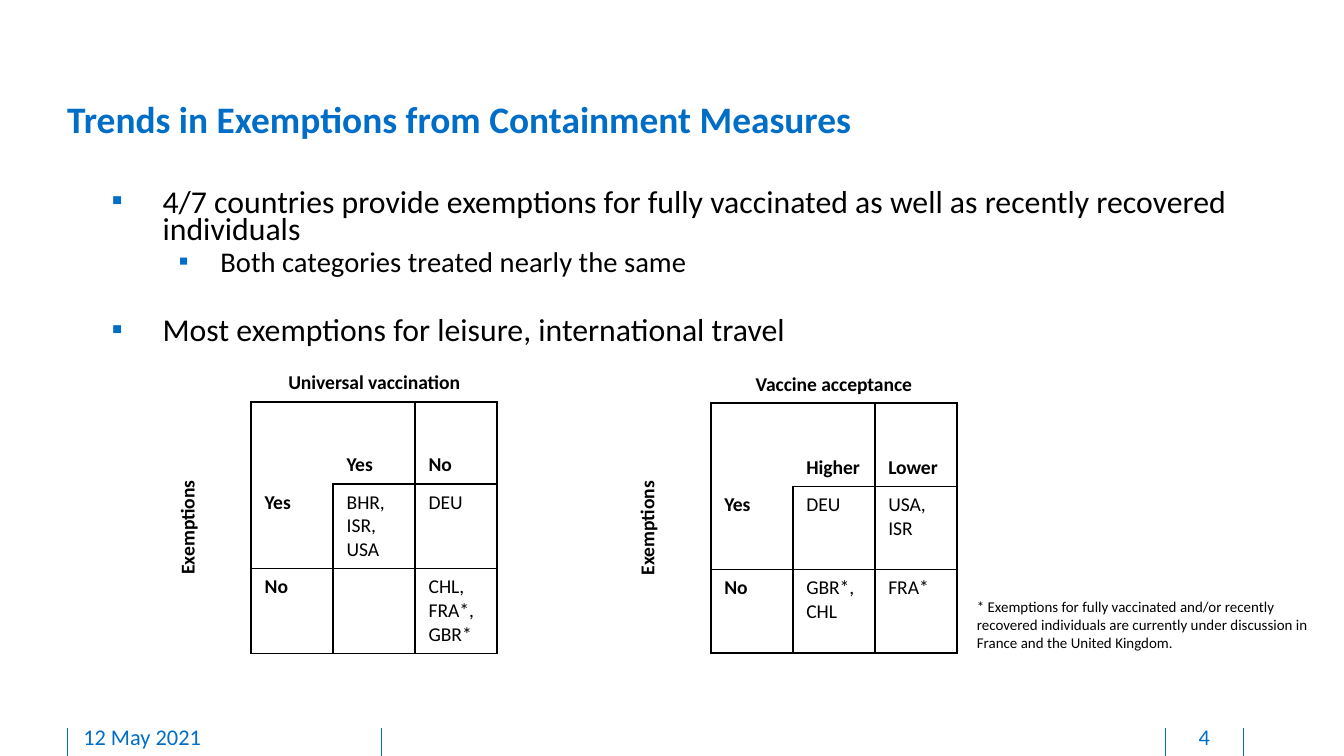
from dataclasses import dataclass

from lxml.etree import SubElement
from pptx import Presentation
from pptx.dml.color import RGBColor
from pptx.enum.shapes import MSO_CONNECTOR
from pptx.enum.text import MSO_ANCHOR, MSO_AUTO_SIZE, PP_ALIGN
from pptx.oxml.ns import qn
from pptx.util import Inches, Pt

BLUE, BLACK = "006EC7", "000000"
FONT = "Calibri"
SIDES = "LRTB"

# Sides of each table cell that carry a line
BORDERS = [
    ["", "B", "B", "B"],
    ["R", "LT", "TRB", "LTRB"],
    ["R", "LRB", "LTRB", "LTRB"],
    ["R", "LTRB", "LTRB", "LTRB"],
]


@dataclass
class Matrix:
    left: float
    row_height: float
    heading: str
    columns: list[str]
    rows: list[list[str]]


@dataclass
class Bullet:
    text: str
    level: int = 0
    size: float = 17
    margin: float = 0.38
    indent: float = -0.38
    before: float = 4.3


MATRICES = [
    Matrix(4.68, 0.62, "Vaccine acceptance", ["Higher", "Lower"],
           [["Yes", "DEU", "USA, ISR"], ["No", "GBR*, CHL", "FRA*"]]),
    Matrix(1.26, 0.61, "Universal vaccination", ["Yes", "No"],
           [["Yes", "BHR, ISR, USA", "DEU"], ["No", "", "CHL, FRA*, GBR*"]]),
]

BULLETS = [
    Bullet("4/7 countries provide exemptions for fully vaccinated as well as "
           "recently recovered individuals", before=0),
    Bullet("Both categories treated nearly the same", 1, 15.3, 0.81, -0.31),
    Bullet("Most exemptions for leisure, international travel", before=23),
]


def rgb(value: str) -> RGBColor:
    return RGBColor.from_string(value)


def write(p, text: str, size: float, color: str = BLACK, bold: bool = False) -> None:
    r = p.add_run()
    r.text = text
    style = {"name": FONT, "size": Pt(size), "bold": bold}
    for name, value in style.items():
        setattr(r.font, name, value)
    r.font.color.rgb = rgb(color)


def place(s, left: float, top: float, width: float, height: float) -> None:
    box = {"left": left, "top": top, "width": width, "height": height}
    for name, value in box.items():
        setattr(s, name, Inches(value))


def format_frame(tf, bottom: float = 0) -> None:
    """Wrap, align to the top and remove the insets except the bottom one."""
    style = {"word_wrap": True, "auto_size": MSO_AUTO_SIZE.NONE,
             "vertical_anchor": MSO_ANCHOR.TOP, "margin_left": 0,
             "margin_right": 0, "margin_top": 0, "margin_bottom": Inches(bottom)}
    for name, value in style.items():
        setattr(tf, name, value)


def add_footer_line(slide, x: float) -> None:
    s = slide.shapes.add_connector(MSO_CONNECTOR.STRAIGHT, Inches(x), Inches(5.42),
                                   Inches(x), Inches(5.64))
    s.line.color.rgb = rgb(BLUE)
    s.line.width = Pt(0.5)
    SubElement(s._element.spPr, qn("a:effectLst"))


def add_footer_text(slide, left: float, width: float, text: str, align) -> None:
    s = slide.shapes.add_textbox(Inches(left), Inches(5.38), Inches(width), Inches(0.21))
    format_frame(s.text_frame, bottom=0.05)
    p = s.text_frame.paragraphs[0]
    p.alignment = align
    write(p, text, 12, BLUE)


def add_bullet(p, item: Bullet) -> None:
    p.level = item.level
    p.line_spacing = 0.7
    p.space_before = Pt(item.before)
    pPr = p._p.get_or_add_pPr()
    pPr.set("marL", str(Inches(item.margin)))
    pPr.set("indent", str(Inches(item.indent)))
    color = SubElement(pPr, qn("a:buClr"))
    SubElement(color, qn("a:srgbClr"), val=BLUE)
    SubElement(pPr, qn("a:buChar"), char="▪")
    write(p, item.text, item.size)


def set_borders(cell, lined: str) -> None:
    tcPr = cell._tc.get_or_add_tcPr()
    for side in SIDES:
        ln = SubElement(tcPr, qn(f"a:ln{side}"), w=str(Pt(1)))
        if side in lined:
            fill = SubElement(ln, qn("a:solidFill"))
            SubElement(fill, qn("a:srgbClr"), val=BLACK)
        else:
            SubElement(ln, qn("a:noFill"))


def fill_cell(cell, text: str, bold: bool, anchor=MSO_ANCHOR.TOP, align=PP_ALIGN.LEFT) -> None:
    cell.vertical_anchor = anchor
    p = cell.text_frame.paragraphs[0]
    p.alignment = align
    write(p, text, 10.5, bold=bold)


def add_matrix(slide, m: Matrix) -> None:
    table = slide.shapes.add_table(4, 4, Inches(m.left), Inches(2.38), Inches(2.44),
                                   Inches(4 * m.row_height)).table
    table.first_row = table.horz_banding = False
    for col in table.columns:
        col.width = Inches(0.61)
    for row, sides in zip(table.rows, BORDERS):
        row.height = Inches(m.row_height)
        for cell, lined in zip(row.cells, sides):
            set_borders(cell, lined)
            cell.fill.background()

    heading, side_label = table.cell(0, 1), table.cell(1, 0)
    heading.merge(table.cell(0, 3))
    side_label.merge(table.cell(3, 0))
    fill_cell(heading, m.heading, True, MSO_ANCHOR.BOTTOM, PP_ALIGN.CENTER)
    fill_cell(side_label, "Exemptions", True, MSO_ANCHOR.BOTTOM, PP_ALIGN.CENTER)
    side_label._tc.get_or_add_tcPr().set("vert", "vert270")

    for c, name in enumerate(m.columns, 2):
        fill_cell(table.cell(1, c), name, True, MSO_ANCHOR.BOTTOM)
    for r, texts in enumerate(m.rows, 2):
        for c, text in enumerate(texts, 1):
            if text:
                fill_cell(table.cell(r, c), text, bold=c == 1)


def main() -> None:
    prs = Presentation()
    prs.slide_width = Inches(10)
    prs.slide_height = prs.slide_width * 9 // 16
    slide = prs.slides.add_slide(prs.slide_layouts[1])
    title, body = slide.placeholders

    place(title, 0.5, 0.75, 8.73, 0.31)
    format_frame(title.text_frame)
    p = title.text_frame.paragraphs[0]
    p.alignment = PP_ALIGN.LEFT
    p.line_spacing = Pt(21.5)
    write(p, "Trends in Exemptions from Containment Measures", 20, BLUE, True)

    place(body, 0.83, 1.43, 8.73, 1.26)
    tf = body.text_frame
    format_frame(tf)
    for i, item in enumerate(BULLETS):
        add_bullet(tf.add_paragraph() if i else tf.paragraphs[0], item)

    for m in MATRICES:
        add_matrix(slide, m)

    note = slide.shapes.add_textbox(Inches(7.17), Inches(4.4), Inches(2.87), Inches(0.5))
    note.text_frame.word_wrap = True
    write(note.text_frame.paragraphs[0],
          "* Exemptions for fully vaccinated and/or recently recovered individuals are "
          "currently under discussion in France and the United Kingdom.", 8)

    for x in (0.5, 2.84, 8.67, 9.25):
        add_footer_line(slide, x)
    add_footer_text(slide, 0.62, 2.03, "12 May 2021", PP_ALIGN.LEFT)
    add_footer_text(slide, 8.69, 0.54, "4", PP_ALIGN.CENTER)
    prs.save("out.pptx")


if __name__ == "__main__":
    main()
